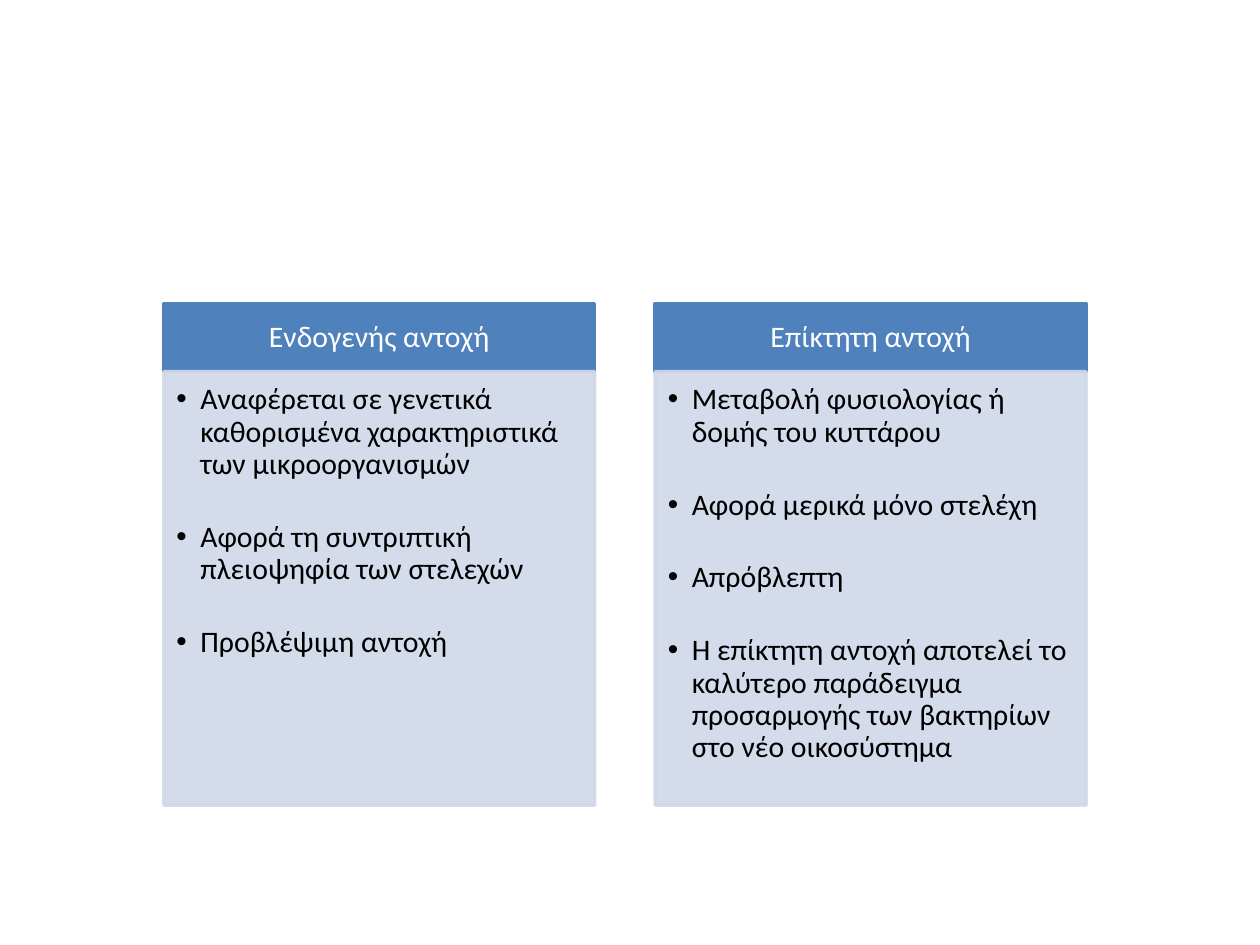
from lxml import etree
from pptx import Presentation
from pptx import util as u
from pptx.dml.color import RGBColor
from pptx.enum import text
from pptx.oxml.ns import qn

HEADING_BLUE = RGBColor(0x4F, 0x81, 0xBD)
PANEL_BLUE = RGBColor(0xD0, 0xD8, 0xE8)
WHITE = RGBColor(255, 255, 255)
BLACK = RGBColor(0, 0, 0)

LEFT, TOP, PITCH = 1.3, 2.41, 3.9
WIDTH, HEADING_HEIGHT, PANEL_HEIGHT = 3.42, 0.54, 3.44
HANGING = u.Inches(0.19)

COLUMNS = [
    ("Ενδογενής αντοχή", [
        "Αναφέρεται σε γενετικά καθορισμένα χαρακτηριστικά των μικροοργανισμών",
        "Αφορά τη συντριπτική πλειοψηφία των στελεχών",
        "Προβλέψιμη αντοχή",
    ]),
    ("Επίκτητη αντοχή", [
        "Μεταβολή φυσιολογίας ή δομής του κυττάρου",
        "Αφορά μερικά μόνο στελέχη",
        "Απρόβλεπτη",
        "Η επίκτητη αντοχή αποτελεί το καλύτερο παράδειγμα "
        "προσαρμογής των βακτηρίων στο νέο οικοσύστημα",
    ]),
]


def style_box(box, bounds, color, insets, anchor):
    """Place a placeholder and give it one colour for fill and outline."""
    box.left, box.top, box.width, box.height = map(u.Inches, bounds)
    box.fill.solid()
    box.fill.fore_color.rgb = color
    box.line.color.rgb = color
    box.line.width = u.Pt(2)
    frame = box.text_frame
    frame.word_wrap = True
    frame.auto_size = text.MSO_AUTO_SIZE.NONE
    frame.vertical_anchor = anchor
    (frame.margin_left, frame.margin_top,
     frame.margin_right, frame.margin_bottom) = map(u.Inches, insets)


def set_opacity(box, percent):
    for color in box.element.spPr.iter(qn("a:srgbClr")):
        etree.SubElement(color, qn("a:alpha"), val=str(percent * 1000))


def write(paragraph, words, color, before=0):
    paragraph.line_spacing = 0.9
    paragraph.space_before = u.Pt(before)
    paragraph.space_after = u.Pt(0)
    run = paragraph.add_run()
    run.text = words
    run.font.name = "Calibri"
    run.font.size = u.Pt(17)
    run.font.bold = False
    run.font.color.rgb = color


def fill_heading(heading, words, left):
    style_box(heading, (left, TOP, WIDTH, HEADING_HEIGHT), HEADING_BLUE,
              (0.13, 0.08, 0.13, 0.08), text.MSO_ANCHOR.MIDDLE)
    paragraph = heading.text_frame.paragraphs[0]
    paragraph.alignment = text.PP_ALIGN.CENTER
    write(paragraph, words, WHITE)


def fill_panel(panel, points, left):
    style_box(panel, (left, TOP + HEADING_HEIGHT, WIDTH, PANEL_HEIGHT),
              PANEL_BLUE, (0.1, 0.1, 0.13, 0.15), text.MSO_ANCHOR.TOP)
    set_opacity(panel, 90)
    frame = panel.text_frame
    for number, point in enumerate(points):
        paragraph = frame.add_paragraph() if number else frame.paragraphs[0]
        properties = paragraph._p.get_or_add_pPr()
        properties.set("marL", str(HANGING))
        properties.set("indent", str(-HANGING))
        write(paragraph, point, BLACK, before=23.3 if number else 0)


def main():
    deck = Presentation()
    deck.slide_width, deck.slide_height = u.Inches(10), u.Inches(7.5)
    # The comparison layout pairs a heading with a list in each column
    slide = deck.slides.add_slide(deck.slide_layouts[4])
    title, *parts = slide.placeholders
    title.element.getparent().remove(title.element)

    for column, (heading_text, points) in enumerate(COLUMNS):
        heading, panel = parts[2 * column:2 * column + 2]
        left = LEFT + column * PITCH
        fill_heading(heading, heading_text, left)
        fill_panel(panel, points, left)

    deck.save("out.pptx")


if __name__ == "__main__":
    main()
